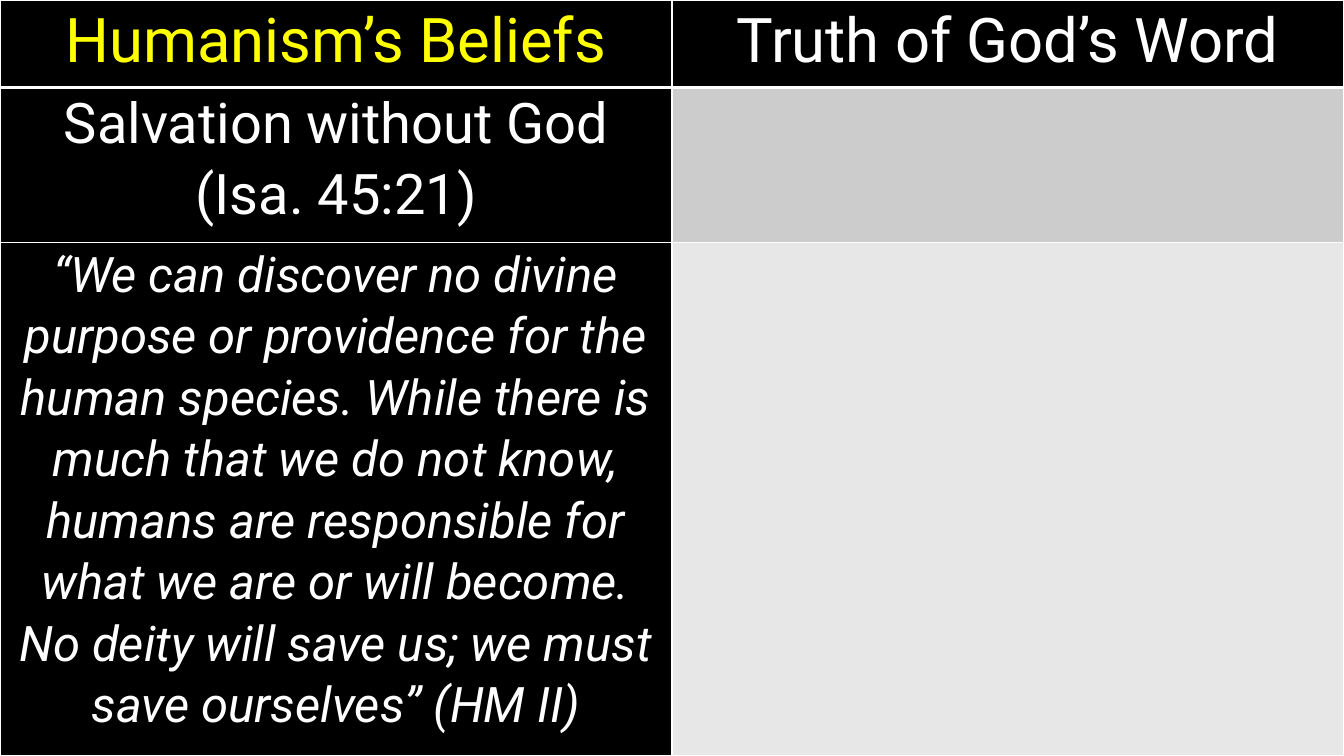
from dataclasses import dataclass

from lxml import etree
from pptx import Presentation
from pptx.dml.color import RGBColor
from pptx.enum.text import PP_ALIGN
from pptx.oxml.ns import qn
from pptx.table import _Cell
from pptx.util import Pt

CENTER = PP_ALIGN.CENTER
BLACK = RGBColor(0x00, 0x00, 0x00)
WHITE = RGBColor(0xFF, 0xFF, 0xFF)
YELLOW = RGBColor(0xFF, 0xFF, 0x00)
GRAY = RGBColor(0xCC, 0xCC, 0xCC)
PALE_GRAY = RGBColor(0xE7, 0xE7, 0xE7)

FONT = "Roboto"
SLIDE_WIDTH, SLIDE_HEIGHT = 960, 540
ROW_HEIGHTS = (62.5, 111, 366.5)
THIN, THICK = 1, 3


@dataclass(frozen=True)
class Entry:
    text: str = ""
    size: float = 44
    color: RGBColor = WHITE
    fill: RGBColor = BLACK
    italic: bool = False


BELIEFS = (
    (Entry("Humanism’s Beliefs", color=YELLOW), Entry("Truth of God’s Word")),
    (Entry("Salvation without God (Isa. 45:21)", size=40), Entry(fill=GRAY)),
    (
        Entry(
            "“We can discover no divine purpose or providence for the human "
            "species. While there is much that we do not know, humans are "
            "responsible for what we are or will become. No deity will save us; "
            "we must save ourselves” (HM II)",
            size=35,
            italic=True,
        ),
        Entry(fill=PALE_GRAY),
    ),
)


def add_borders(cell: _Cell, top: float, bottom: float) -> None:
    """Add white cell borders; they must come before the fill in the XML."""
    properties = cell._tc.get_or_add_tcPr()
    widths = {"a:lnL": THIN, "a:lnR": THIN, "a:lnT": top, "a:lnB": bottom}
    for side, width in widths.items():
        line = etree.SubElement(properties, qn(side), w=str(Pt(width)))
        fill = etree.SubElement(line, qn("a:solidFill"))
        etree.SubElement(fill, qn("a:srgbClr"), val=str(WHITE))


def write_entry(cell: _Cell, entry: Entry) -> None:
    cell.margin_left = cell.margin_right = Pt(5)
    cell.margin_top = cell.margin_bottom = Pt(0)
    cell.fill.solid()
    cell.fill.fore_color.rgb = entry.fill
    if not entry.text:
        return
    paragraph = cell.text_frame.paragraphs[0]
    paragraph.alignment = CENTER
    paragraph.line_spacing = 1.07
    run = paragraph.add_run()
    run.text = entry.text
    run.font.name = FONT
    run.font.size = Pt(entry.size)
    run.font.bold = False
    run.font.italic = entry.italic
    run.font.color.rgb = entry.color


def main() -> None:
    presentation = Presentation()
    presentation.slide_width = Pt(SLIDE_WIDTH)
    presentation.slide_height = Pt(SLIDE_HEIGHT)
    slide = presentation.slides.add_slide(presentation.slide_layouts[6])
    slide.background.fill.solid()
    slide.background.fill.fore_color.rgb = BLACK

    comparison = slide.shapes.add_table(
        len(BELIEFS), len(BELIEFS[0]), Pt(0), Pt(0), Pt(SLIDE_WIDTH), Pt(SLIDE_HEIGHT)
    ).table
    for row, (height, entries) in enumerate(zip(ROW_HEIGHTS, BELIEFS)):
        comparison.rows[row].height = Pt(height)
        for column, entry in enumerate(entries):
            cell = comparison.cell(row, column)
            add_borders(
                cell,
                top=THICK if row == 1 else THIN,
                bottom=THICK if row == 0 else THIN,
            )
            write_entry(cell, entry)

    presentation.save("out.pptx")


if __name__ == "__main__":
    main()
